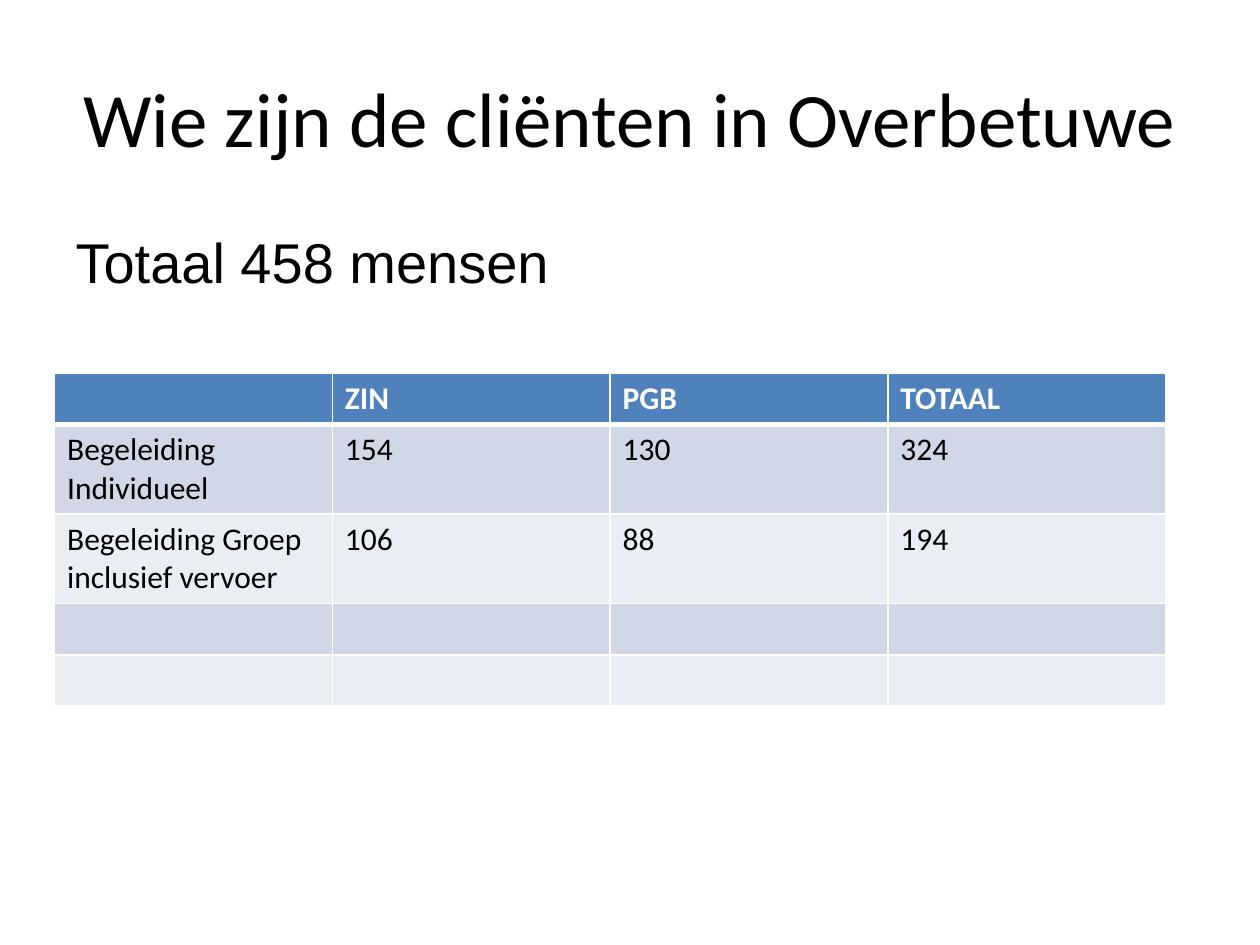
from dataclasses import dataclass

from lxml.etree import SubElement
from pptx import Presentation
from pptx.dml.color import RGBColor
from pptx.enum.text import MSO_ANCHOR, PP_ALIGN
from pptx.oxml.ns import qn
from pptx.util import Cm, Pt

BLACK = RGBColor(0x00, 0x00, 0x00)
WHITE = RGBColor(0xFF, 0xFF, 0xFF)
HEADER_BLUE = RGBColor(0x4F, 0x81, 0xBD)
BANDS = (RGBColor(0xD0, 0xD8, 0xE8), RGBColor(0xE9, 0xED, 0xF4))

COLUMN_WIDTH = Cm(5.6)
ROW_HEIGHT = Cm(1.03)


@dataclass
class Row:
    values: tuple[str, ...]
    fill: RGBColor
    color: RGBColor = BLACK
    bold: bool = False
    top: float = 1
    bottom: float = 1


CLIENT_COUNTS = (
    ("Begeleiding Individueel", "154", "130", "324"),
    ("Begeleiding Groep inclusief vervoer", "106", "88", "194"),
    ("", "", "", ""),
    ("", "", "", ""),
)
ROWS = [Row(("", "ZIN", "PGB", "TOTAAL"), HEADER_BLUE, WHITE, bold=True, bottom=3)]
ROWS += [
    Row(values, BANDS[i % 2], top=3 if i == 0 else 1)
    for i, values in enumerate(CLIENT_COUNTS)
]


def set_text(tf, text: str, *, size: float, font="Calibri", color=BLACK,
             bold=False, align=PP_ALIGN.LEFT):
    """Fill the first paragraph and return it; empty text keeps its line height."""
    p = tf.paragraphs[0]
    p.alignment = align
    p.font.size = Pt(size)
    if text:
        r = p.add_run()
        r.text = text
        r.font.name = font
        r.font.size = Pt(size)
        r.font.bold = bold
        r.font.color.rgb = color
    else:
        SubElement(p._p, qn("a:endParaRPr"), sz=str(size * 100))
    return p


def place(sp, left: float, top: float, width: float, height: float) -> None:
    """Move and size a shape, in centimetres."""
    sp.left, sp.top, sp.width, sp.height = map(Cm, (left, top, width, height))


def set_borders(cell, top: float, bottom: float) -> None:
    tc_pr = cell._tc.get_or_add_tcPr()
    for side, width in (("L", 1), ("R", 1), ("T", top), ("B", bottom)):
        ln = SubElement(tc_pr, qn(f"a:ln{side}"), w=str(Pt(width)))
        fill = SubElement(ln, qn("a:solidFill"))
        SubElement(fill, qn("a:srgbClr"), val=str(WHITE))


def add_client_table(s, rows: list[Row], left: float, top: float) -> None:
    n_cols = len(rows[0].values)
    table = s.shapes.add_table(
        len(rows), n_cols, Cm(left), Cm(top),
        COLUMN_WIDTH * n_cols, ROW_HEIGHT * len(rows),
    ).table
    for column in table.columns:
        column.width = COLUMN_WIDTH
    for i, row in enumerate(rows):
        for j, value in enumerate(row.values):
            cell = table.cell(i, j)
            set_borders(cell, row.top, row.bottom)
            cell.fill.solid()
            cell.fill.fore_color.rgb = row.fill
            set_text(cell.text_frame, value, size=18, color=row.color, bold=row.bold)


def main() -> None:
    prs = Presentation()
    prs.slide_width, prs.slide_height = Cm(25.4), Cm(19.05)
    s = prs.slides.add_slide(prs.slide_layouts[1])

    title, body = s.placeholders
    place(title, 1.27, 0.76, 22.86, 3.18)
    title.text_frame.vertical_anchor = MSO_ANCHOR.MIDDLE
    set_text(title.text_frame, "Wie zijn de cliënten in Overbetuwe", size=44,
             align=PP_ALIGN.CENTER)

    place(body, 1.27, 4.45, 22.86, 12.57)
    p = set_text(body.text_frame, "Totaal 458 mensen", size=32, font="Arial")
    p_pr = p._p.get_or_add_pPr()
    p_pr.set("marL", "0")
    p_pr.set("indent", "0")
    p_pr.insert(0, p_pr.makeelement(qn("a:buNone")))

    add_client_table(s, ROWS, 1.1, 7.53)
    prs.save("out.pptx")


if __name__ == "__main__":
    main()
